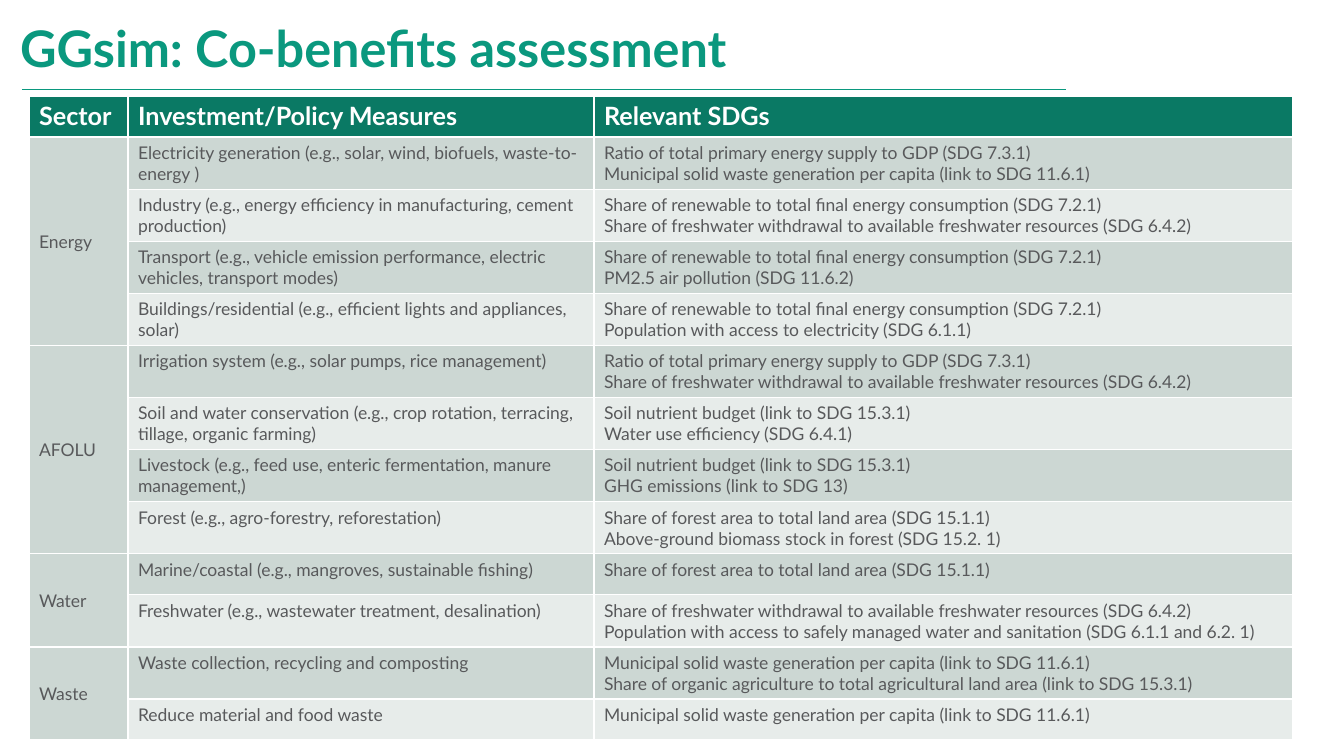
from dataclasses import dataclass

from lxml.etree import SubElement
from pptx import Presentation
from pptx.dml.color import RGBColor
from pptx.enum.shapes import MSO_CONNECTOR
from pptx.enum.text import MSO_ANCHOR, MSO_AUTO_SIZE, PP_ALIGN
from pptx.oxml.ns import qn
from pptx.util import Pt

SCALE = 914400 / 100.8


@dataclass(frozen=True)
class Theme:
    font: str = "Lato"
    green: str = "0A987E"
    head: str = "0A7964"
    white: str = "FFFFFF"
    text: str = "58595B"
    dark: str = "CCD7D3"
    light: str = "E7ECEA"
    title: float = 36
    label: float = 18
    body: float = 12.5
    rule: float = 0.5


THEME = Theme()

SUPPLY = "Ratio of total primary energy supply to GDP (SDG 7.3.1)"
REFUSE = "Municipal solid waste generation per capita (link to SDG 11.6.1)"
SHARE = "Share of renewable to total final energy consumption (SDG 7.2.1)"
FRESH = "Share of freshwater withdrawal to available freshwater resources (SDG 6.4.2)"
SOIL = "Soil nutrient budget (link to SDG 15.3.1)"
FOREST = "Share of forest area to total land area (SDG 15.1.1)"

HEADS = ["Sector", "Investment/Policy Measures", "Relevant SDGs"]
SECTORS = {
    "Energy": [
        ("Electricity generation (e.g., solar, wind, biofuels, waste-to-energy )",
         [SUPPLY, REFUSE]),
        ("Industry (e.g., energy efficiency in manufacturing, cement production)",
         [SHARE, FRESH]),
        ("Transport (e.g., vehicle emission performance, electric vehicles, transport modes)",
         [SHARE, "PM2.5 air pollution (SDG 11.6.2)"]),
        ("Buildings/residential (e.g., efficient lights and appliances, solar)",
         [SHARE, "Population with access to electricity (SDG 6.1.1)"]),
    ],
    "AFOLU": [
        ("Irrigation system (e.g., solar pumps, rice management)",
         [SUPPLY, FRESH]),
        ("Soil and water conservation (e.g., crop rotation, terracing, tillage, organic farming)",
         [SOIL, "Water use efficiency (SDG 6.4.1)"]),
        ("Livestock (e.g., feed use, enteric fermentation, manure management,)",
         [SOIL, "GHG emissions (link to SDG 13)"]),
        ("Forest (e.g., agro-forestry, reforestation)",
         [FOREST, "Above-ground biomass stock in forest (SDG 15.2. 1)"]),
    ],
    "Water": [
        ("Marine/coastal (e.g., mangroves, sustainable fishing)",
         [FOREST]),
        ("Freshwater (e.g., wastewater treatment, desalination)",
         [FRESH,
          "Population with access to safely managed water and sanitation (SDG 6.1.1 and 6.2. 1)"]),
    ],
    "Waste": [
        ("Waste collection, recycling and composting",
         [REFUSE,
          "Share of organic agriculture to total agricultural land area (link to SDG 15.3.1)"]),
        ("Reduce material and food waste",
         [REFUSE]),
    ],
}


def px(size):
    return round(size * SCALE)


def color(code):
    return RGBColor.from_string(code)


def style(para, size, code, bold):
    font = para.font
    font.name = THEME.font
    font.size = Pt(size)
    font.bold = bold
    font.color.rgb = color(code)


def add_title(slide, text):
    title = slide.shapes.title
    title.left, title.top, title.width, title.height = 0, 0, px(941), px(103)
    frame = title.text_frame
    frame.text = text
    frame.word_wrap = True
    frame.auto_size = MSO_AUTO_SIZE.NONE
    frame.vertical_anchor = MSO_ANCHOR.MIDDLE
    frame.margin_left = px(20)
    para = frame.paragraphs[0]
    para.alignment = PP_ALIGN.LEFT
    para.line_spacing = 0.9
    style(para, THEME.title, THEME.green, True)


def add_rule(slide, left, right, top):
    rule = slide.shapes.add_connector(
        MSO_CONNECTOR.STRAIGHT, px(left), px(top), px(right), px(top))
    rule.line.color.rgb = color(THEME.green)
    rule.line.width = Pt(THEME.rule)
    SubElement(rule.element.spPr, qn("a:effectLst"))


def fill_cell(cell, lines, fill, size=THEME.body, code=THEME.text, bold=False):
    cell.fill.solid()
    cell.fill.fore_color.rgb = color(fill)
    cell.text = "\n".join(lines)
    for para in cell.text_frame.paragraphs:
        style(para, size, code, bold)


def add_grid(slide, heads, sectors):
    count = 1 + sum(map(len, sectors.values()))
    widths = [99, 466, 699]
    shape = slide.shapes.add_table(
        count, len(heads), px(29), px(96), px(sum(widths)), px(643))
    table = shape.table
    for column, width in zip(table.columns, widths):
        column.width = px(width)
    for row in table.rows:
        row.height = px(41)
    shape.height = px(643)

    for col, head in enumerate(heads):
        fill_cell(table.cell(0, col), [head], THEME.head,
                  THEME.label, THEME.white, True)
    top = 1
    for sector, items in sectors.items():
        first = table.cell(top, 0)
        first.merge(table.cell(top + len(items) - 1, 0))
        fill_cell(first, [sector], THEME.dark)
        first.vertical_anchor = MSO_ANCHOR.MIDDLE
        for row, (measure, goals) in enumerate(items, top):
            fill = THEME.dark if row % 2 else THEME.light
            fill_cell(table.cell(row, 1), [measure], fill)
            fill_cell(table.cell(row, 2), goals, fill)
        top += len(items)


def main():
    deck = Presentation()
    deck.slide_width, deck.slide_height = px(1344), px(756)
    slide = deck.slides.add_slide(deck.slide_layouts.get_by_name("Title Only"))
    add_title(slide, "GGsim: Co-benefits assessment")
    add_rule(slide, 22, 1066, 89)
    add_grid(slide, HEADS, SECTORS)
    deck.save("out.pptx")


if __name__ == "__main__":
    main()
